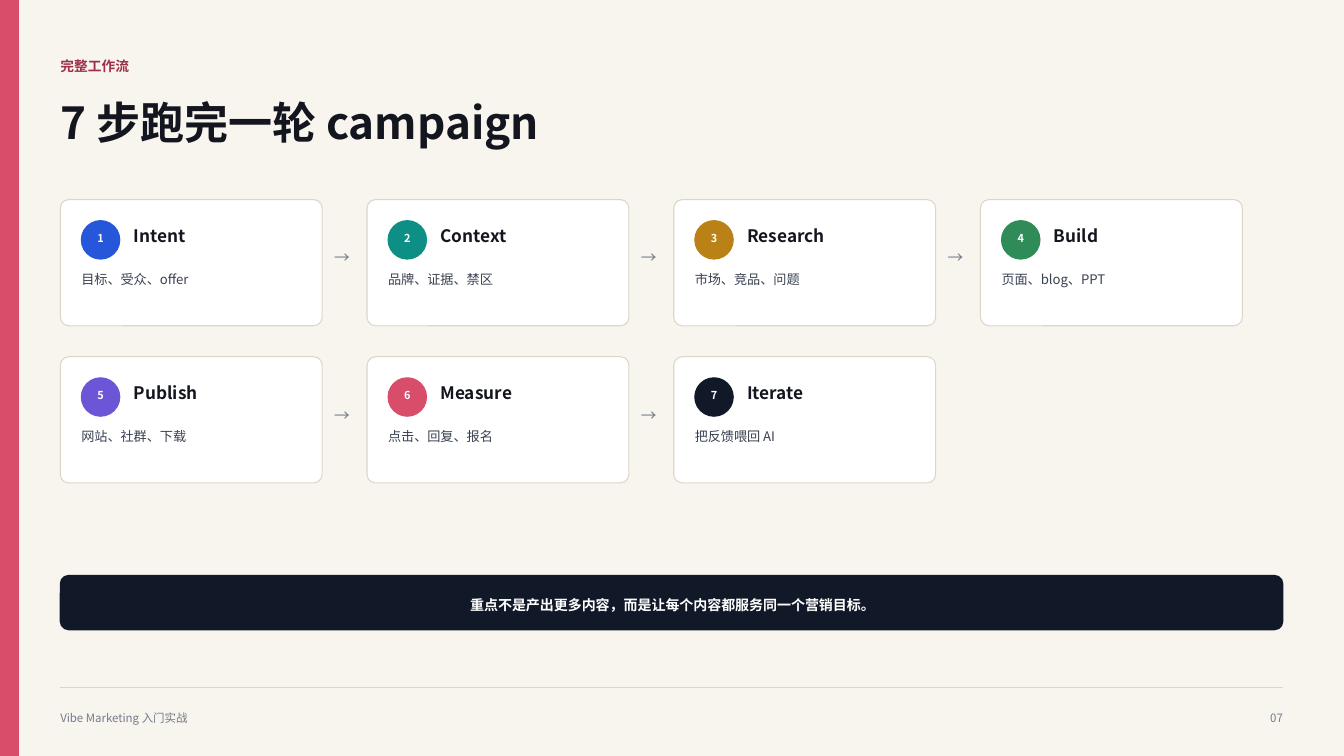
from lxml.etree import SubElement
from pptx import Presentation
from pptx.dml.color import RGBColor as RGB
from pptx.enum.shapes import MSO_CONNECTOR as LINK, MSO_SHAPE as KIND
from pptx.enum.text import PP_ALIGN as ALIGN
from pptx.oxml.ns import qn
from pptx.util import Cm, Pt

FONT = "Noto Sans CJK SC"
PAPER = RGB(0xF8, 0xF5, 0xEF)
WHITE = RGB(0xFF, 0xFF, 0xFF)
INK = RGB(0x14, 0x16, 0x1F)
SLATE = RGB(0x39, 0x41, 0x50)
GREY = RGB(0x73, 0x7B, 0x8C)
SAND = RGB(0xDD, 0xD5, 0xC8)
WINE = RGB(0x9E, 0x2F, 0x47)
ROSE = RGB(0xD8, 0x4E, 0x6A)
BLUE = RGB(0x26, 0x56, 0xD9)
TEAL = RGB(0x0E, 0x8F, 0x86)
GOLD = RGB(0xB9, 0x81, 0x16)
GREEN = RGB(0x2F, 0x8B, 0x57)
VIOLET = RGB(0x6D, 0x55, 0xD8)
NAVY = RGB(0x11, 0x18, 0x27)

deck = Presentation()
deck.slide_width, deck.slide_height = Cm(33.87), Cm(19.05)
slide = deck.slides.add_slide(deck.slide_layouts[6])
slide.background.fill.solid()
slide.background.fill.fore_color.rgb = PAPER


def write(text, x, y, w, h, size, color, bold=False, align=ALIGN.LEFT, lead=1.12):
    frame = slide.shapes.add_textbox(Cm(x), Cm(y), Cm(w), Cm(h)).text_frame
    frame.word_wrap = True
    frame.margin_left = frame.margin_right = 0
    frame.margin_top = frame.margin_bottom = 0
    para = frame.paragraphs[0]
    para.alignment, para.line_spacing = align, lead
    run = para.add_run()
    run.text = text
    run.font.size, run.font.bold = Pt(size), bold
    run.font.color.rgb = color
    run.font.name = FONT
    SubElement(run.font._element, qn("a:ea"), typeface=FONT)


def draw(kind, x, y, w, h, fill, edge, bend=None):
    shape = slide.shapes.add_shape(kind, Cm(x), Cm(y), Cm(w), Cm(h))
    shape.shadow.inherit = False
    shape.fill.solid()
    shape.fill.fore_color.rgb = fill
    shape.line.color.rgb = edge
    shape.line.width = Pt(0.75)
    if bend is not None:
        shape.adjustments[0] = bend


LEFT, RIGHT = 1.52, 32.33

draw(KIND.RECTANGLE, 0, 0, 0.48, 19.05, ROSE, ROSE)
rule = slide.shapes.add_connector(LINK.STRAIGHT, Cm(LEFT), Cm(17.32), Cm(RIGHT), Cm(17.32))
rule.line.color.rgb = SAND
rule.line.width = Pt(0.75)
SubElement(rule._element.spPr, qn("a:effectLst"))
write("Vibe Marketing 入门实战", LEFT, 17.88, 13.77, 0.64, size=8.2, color=GREY)
write("07", RIGHT - 1.27, 17.88, 1.27, 0.64, size=8.2, color=GREY, align=ALIGN.RIGHT)

write("完整工作流", LEFT, 1.42, 22.76, 0.64, size=9.8, color=WINE, bold=True)
write("7 步跑完一轮 campaign", LEFT, 2.49, 20.12, 1.37, size=31.5, color=INK, bold=True, lead=0.96)

steps = [
    ("Intent", "目标、受众、offer", BLUE),
    ("Context", "品牌、证据、禁区", TEAL),
    ("Research", "市场、竞品、问题", GOLD),
    ("Build", "页面、blog、PPT", GREEN),
    ("Publish", "网站、社群、下载", VIOLET),
    ("Measure", "点击、回复、报名", ROSE),
    ("Iterate", "把反馈喂回 AI", NAVY),
]
COLS = 4
for i, (name, note, color) in enumerate(steps):
    row, col = divmod(i, COLS)
    x, y = LEFT + col * 7.73, 5.03 + row * 3.96
    draw(KIND.ROUNDED_RECTANGLE, x, y, 6.6, 3.18, WHITE, SAND, bend=0.067)
    draw(KIND.OVAL, x + 0.53, y + 0.53, 0.97, 0.97, color, color)
    write(str(i + 1), x + 0.53, y + 0.76, 0.97, 0.38, size=7.8, color=WHITE, bold=True, align=ALIGN.CENTER)
    write(name, x + 1.85, y + 0.58, 3.96, 0.58, size=12.3, color=INK, bold=True)
    write(note, x + 0.53, y + 1.75, 5.23, 1.02, size=9.4, color=SLATE)
    if col < COLS - 1 and i < len(steps) - 1:
        write("→", x + 6.73, y + 1.17, 0.74, 0.53, size=11.2, color=GREY, align=ALIGN.CENTER)

draw(KIND.ROUNDED_RECTANGLE, LEFT, 14.5, RIGHT - LEFT, 1.37, NAVY, NAVY, bend=0.154)
write("重点不是产出更多内容，而是让每个内容都服务同一个营销目标。", 2.29, 14.99, 29.31, 0.48,
      size=10, color=WHITE, bold=True, align=ALIGN.CENTER)

deck.save("out.pptx")
